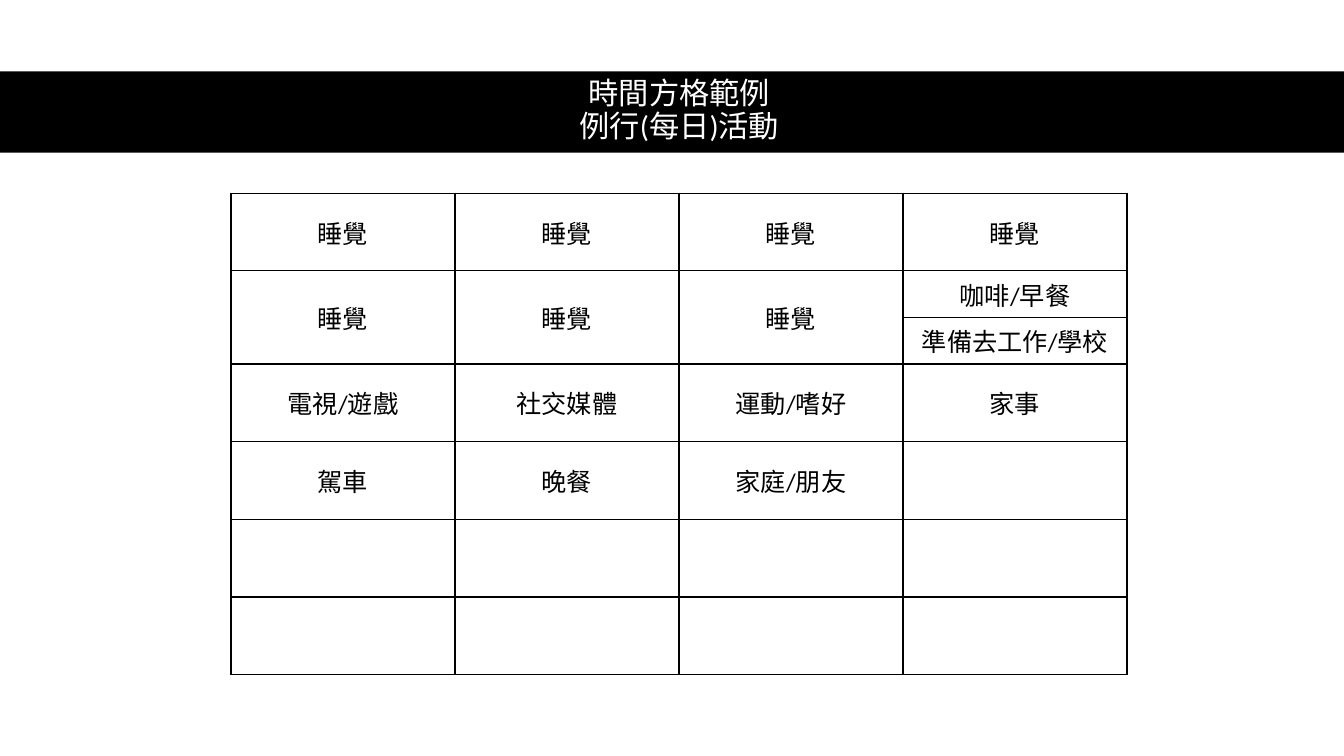
from pptx import Presentation
from pptx.dml.color import RGBColor
from pptx.enum.shapes import MSO_SHAPE
from pptx.enum.text import MSO_ANCHOR, MSO_AUTO_SIZE, PP_ALIGN
from pptx.oxml import parse_xml
from pptx.oxml.ns import nsdecls
from pptx.util import Pt

WIDTH, HEIGHT = 960, 540
ROW, COL = 55.5, 160


def rgb(color):
    return RGBColor.from_string(color)


class SlideBuilder:
    font = "Calibri"
    black, white = "000000", "FFFFFF"

    def __init__(self, s):
        self.s = s

    def format(self, p, size, color):
        p.alignment = PP_ALIGN.CENTER
        p.font.name, p.font.size, p.font.bold = self.font, Pt(size), False
        p.font.color.rgb = rgb(color)

    def band(self, x, y, w, h):
        sp = self.s.shapes.add_shape(MSO_SHAPE.RECTANGLE, Pt(x), Pt(y), Pt(w), Pt(h))
        sp.shadow.inherit = False
        sp.fill.solid()
        sp.fill.fore_color.rgb = rgb(self.black)
        sp.line.fill.background()

    def title(self, text, x, y, w, h, size):
        sp = self.s.shapes.title
        sp.left, sp.top, sp.width, sp.height = Pt(x), Pt(y), Pt(w), Pt(h)
        tf = sp.text_frame
        tf.text = text
        tf.word_wrap, tf.auto_size = True, MSO_AUTO_SIZE.NONE
        tf.vertical_anchor = MSO_ANCHOR.MIDDLE
        p = tf.paragraphs[0]
        p.line_spacing = 0.9
        self.format(p, size, self.white)
        # Bring the title in front of the band
        sp.element.getparent().append(sp.element)

    def borders(self, cell):
        tc_pr = cell._tc.get_or_add_tcPr()
        for side in ("lnL", "lnR", "lnT", "lnB"):
            tc_pr.append(parse_xml(
                f'<a:{side} {nsdecls("a")} w="{Pt(1)}"><a:solidFill>'
                f'<a:srgbClr val="{self.black}"/></a:solidFill></a:{side}>'))

    def table(self, rows, heights, x, y, col_width, size):
        cols = len(rows[0])
        frame = self.s.shapes.add_table(len(rows), cols, Pt(x), Pt(y),
                                        Pt(cols * col_width), Pt(sum(heights)))
        table = frame.table
        table.first_row = table.horz_banding = False
        for column in table.columns:
            column.width = Pt(col_width)
        for i, (texts, height) in enumerate(zip(rows, heights)):
            table.rows[i].height = Pt(height)
            for j, text in enumerate(texts):
                cell = table.cell(i, j)
                cell.text = text
                cell.vertical_anchor = MSO_ANCHOR.MIDDLE
                self.format(cell.text_frame.paragraphs[0], size, self.black)
                self.borders(cell)
                cell.fill.background()
        return table


def main():
    prs = Presentation()
    prs.slide_width, prs.slide_height = Pt(WIDTH), Pt(HEIGHT)
    slide = SlideBuilder(prs.slides.add_slide(prs.slide_layouts[5]))

    # Heading
    slide.band(0, 51, WIDTH, 58)
    slide.title("時間方格範例\v例行(每日)活動", 44, 50.5, 882.5, 58, 21.6)

    # Time grid
    activities = [
        ["睡覺"] * 4,
        ["睡覺"] * 3 + ["咖啡/早餐"],
        [""] * 3 + ["準備去工作/學校"],
        ["電視/遊戲", "社交媒體", "運動/嗜好", "家事"],
        ["駕車", "晚餐", "家庭/朋友", ""],
        [""] * 4,
        [""] * 4,
    ]
    heights = [ROW, ROW / 2, ROW / 2] + [ROW] * 4
    grid = slide.table(activities, heights, 165, 138, COL, 18)

    # Only the last column splits its second block in two
    for j in range(3):
        grid.cell(1, j).merge(grid.cell(2, j))

    prs.save("out.pptx")


if __name__ == "__main__":
    main()
